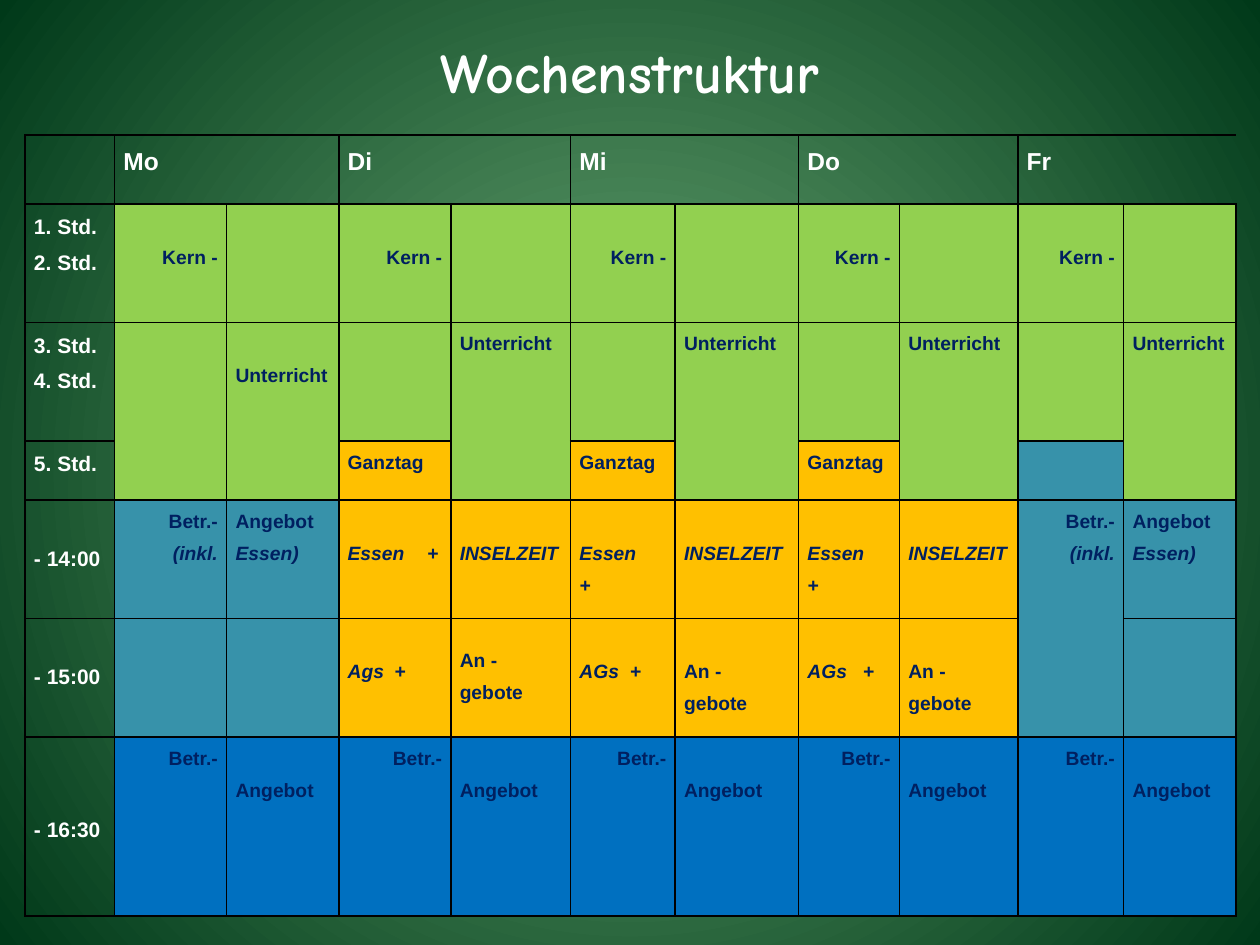
from pptx import Presentation
from pptx import util as u
from pptx.dml.color import RGBColor
from pptx.enum import text
from pptx.oxml import parse_xml
from pptx.oxml.ns import nsdecls, qn

WHITE = RGBColor(0xFF, 0xFF, 0xFF)
NAVY = RGBColor(0x00, 0x20, 0x60)
LIME = RGBColor(0x92, 0xD0, 0x50)
GOLD = RGBColor(0xFF, 0xC0, 0x00)
TEAL = RGBColor(0x37, 0x92, 0xAA)
BLUE = RGBColor(0x00, 0x70, 0xC0)
GLOW = RGBColor(0x6A, 0xA9, 0x74)
DARK = RGBColor(0x00, 0x39, 0x19)

PLAIN = "{2D5ABB26-0587-4C30-8999-92F81FD0307C}"  # no style, no grid
COLS = [0.71, 0.89, 0.89, 0.89, 0.95, 0.83, 0.98, 0.8, 0.94, 0.84, 0.89]
ROWS = [0.55, 0.94, 0.94, 0.47, 0.94, 0.94, 1.42]
DAYS = ["Mo", "Di", "Mi", "Do", "Fr"]

# First column: lines and how many line heights to leave above them
TIMES = [
    (["1. Std.", "2. Std."], 0),
    (["3. Std.", "4. Std."], 0),
    (["5. Std."], 0),
    (["- 14:00"], 1),
    (["- 15:00"], 1),
    (["- 16:30"], 2),
]

# Full days: lunch, lunch tab, clubs, club tab, gap above the offers
LONG = {
    "Di": ("Essen\t+", 0.63, "Ags\t+", 0.37, 0.64),
    "Mi": ("Essen\v+", None, "AGs\t+", 0.4, 1),
    "Do": ("Essen\v+", None, "AGs\t+", 0.44, 1),
}


class Deck:
    """Holds the text style and the current slide."""

    face = "Arial"
    lead = 1.5
    side = u.Inches(0.07)

    def __init__(self):
        self.prs = Presentation()
        self.prs.slide_width, self.prs.slide_height = u.Inches(10), u.Inches(7.5)
        self.slide = self.prs.slides.add_slide(self.prs.slide_layouts[0])
        sub = self.slide.placeholders[1].element
        sub.getparent().remove(sub)

    def back(self, inner, outer):
        fill = self.slide.background.fill
        fill.gradient()
        for stop, color in zip(fill.gradient_stops, (inner, outer)):
            stop.color.rgb = color
        grad = self.slide.element.find(".//" + qn("a:gradFill"))
        grad.replace(grad.find(qn("a:lin")), parse_xml(
            f'<a:path {nsdecls("a")} path="circle"><a:fillToRect '
            'l="50000" t="50000" r="50000" b="50000"/></a:path>'))

    def title(self, words):
        box = self.slide.shapes.title
        box.left, box.top = u.Inches(0.75), u.Inches(0.13)
        box.width, box.height = u.Inches(8.5), u.Inches(0.87)
        box.text_frame.text = words
        box.text_frame.vertical_anchor = text.MSO_ANCHOR.MIDDLE
        par = box.text_frame.paragraphs[0]
        par.alignment = text.PP_ALIGN.CENTER
        self.style(par.font, 32, WHITE, "Comic Neue")

    def style(self, font, size, color, face=None):
        font.name, font.size, font.bold = face or self.face, u.Pt(size), True
        font.color.rgb = color

    def grid(self, left, top):
        frame = self.slide.shapes.add_table(
            len(ROWS), len(COLS), u.Inches(left), u.Inches(top),
            u.Inches(sum(COLS)), u.Inches(sum(ROWS)))
        self.table = frame.table
        self.table.first_row = self.table.horz_banding = False
        frame.element.find(".//" + qn("a:tableStyleId")).text = PLAIN
        for col, size in zip(self.table.columns, COLS):
            col.width = u.Inches(size)
        for row, size in zip(self.table.rows, ROWS):
            row.height = u.Inches(size)

    def cell(self, row, col, lines, size=11, color=NAVY, skip=0,
             right=False, slant=9, tab=None):
        """Write lines; those from index slant on are italic."""
        cell = self.table.cell(row, col)
        cell.margin_left = cell.margin_right = self.side
        cell.margin_top = u.Inches(skip * size * 0.0232)
        cell.margin_bottom = 0
        frame = cell.text_frame
        for num, line in enumerate(lines):
            par = frame.add_paragraph() if num else frame.paragraphs[0]
            par.text = line
            par.line_spacing = self.lead
            if right:
                par.alignment = text.PP_ALIGN.RIGHT
            self.style(par.font, size, color)
            par.font.italic = num >= slant
            if tab:
                stops = parse_xml(
                    f'<a:tabLst {nsdecls("a")}><a:tab '
                    f'pos="{u.Inches(tab)}" algn="l"/></a:tabLst>')
                par.font._element.addprevious(stops)

    def edge(self, row, col, sides):
        props = self.table.cell(row, col)._tc.get_or_add_tcPr()
        for num, side in enumerate(s for s in "LRTB" if s in sides):
            props.insert(num, parse_xml(
                f'<a:ln{side} {nsdecls("a")} w="12700"><a:solidFill>'
                f'<a:srgbClr val="000000"/></a:solidFill></a:ln{side}>'))


def shade(row, col):
    """Fill of a cell; None lets the background through."""
    if row == 0 or col == 0:
        return None
    day, half = divmod(col - 1, 2)
    if row == 6:
        return BLUE
    if row < 3 or row == 3 and (day == 0 or half):
        return LIME
    return TEAL if day in (0, 4) else GOLD


def split(row, col):
    """True where a line runs between a cell and the one below it."""
    if row in (-1, 0, 6):
        return True
    if col == 0:
        return row != 1
    hue = shade(row, col)
    return hue != shade(row + 1, col) or row == 4 and hue == GOLD


def wall(row, col):
    """True where a line runs on the left of a cell."""
    return (col == 0 or col % 2 == 1 or col == len(COLS)
            or shade(row, col) != shade(row, col - 1))


def main():
    deck = Deck()
    deck.back(GLOW, DARK)
    deck.title("Wochenstruktur")
    deck.grid(0.2, 1.07)

    # Time column
    for row, (lines, skip) in enumerate(TIMES, 1):
        deck.cell(row, 0, lines, 12, WHITE, skip)

    # Days, two columns each
    for num, day in enumerate(DAYS):
        a, b = 2 * num + 1, 2 * num + 2
        deck.table.cell(0, a).merge(deck.table.cell(0, b))
        deck.cell(0, a, [day], 14, WHITE)
        deck.cell(1, a, ["Kern -"], skip=1, right=True)
        deck.cell(2, b, ["Unterricht"], skip=int(num == 0))
        if day in LONG:
            meal, stop, club, mark, gap = LONG[day]
            deck.cell(3, a, ["Ganztag"])
            deck.cell(4, a, [meal], skip=1, slant=0, tab=stop)
            deck.cell(4, b, ["INSELZEIT"], skip=1, slant=0)
            deck.cell(5, a, [club], skip=1, slant=0, tab=mark)
            deck.cell(5, b, ["An -\vgebote"], skip=gap)
        else:
            deck.cell(4, a, ["Betr.-", "(inkl."], right=True, slant=1)
            deck.cell(4, b, ["Angebot", "Essen)"], slant=1)
        deck.cell(6, a, ["Betr.-"], right=True)
        deck.cell(6, b, ["Angebot"], skip=1)

    # Fills and lines
    for row in range(len(ROWS)):
        for col in range(len(COLS)):
            fill, hue = deck.table.cell(row, col).fill, shade(row, col)
            if hue is None:
                fill.background()
            else:
                fill.solid()
                fill.fore_color.rgb = hue
            tests = {"L": wall(row, col), "R": wall(row, col + 1),
                     "T": split(row - 1, col), "B": split(row, col)}
            deck.edge(row, col, [side for side, on in tests.items() if on])

    deck.prs.save("out.pptx")


if __name__ == "__main__":
    main()
